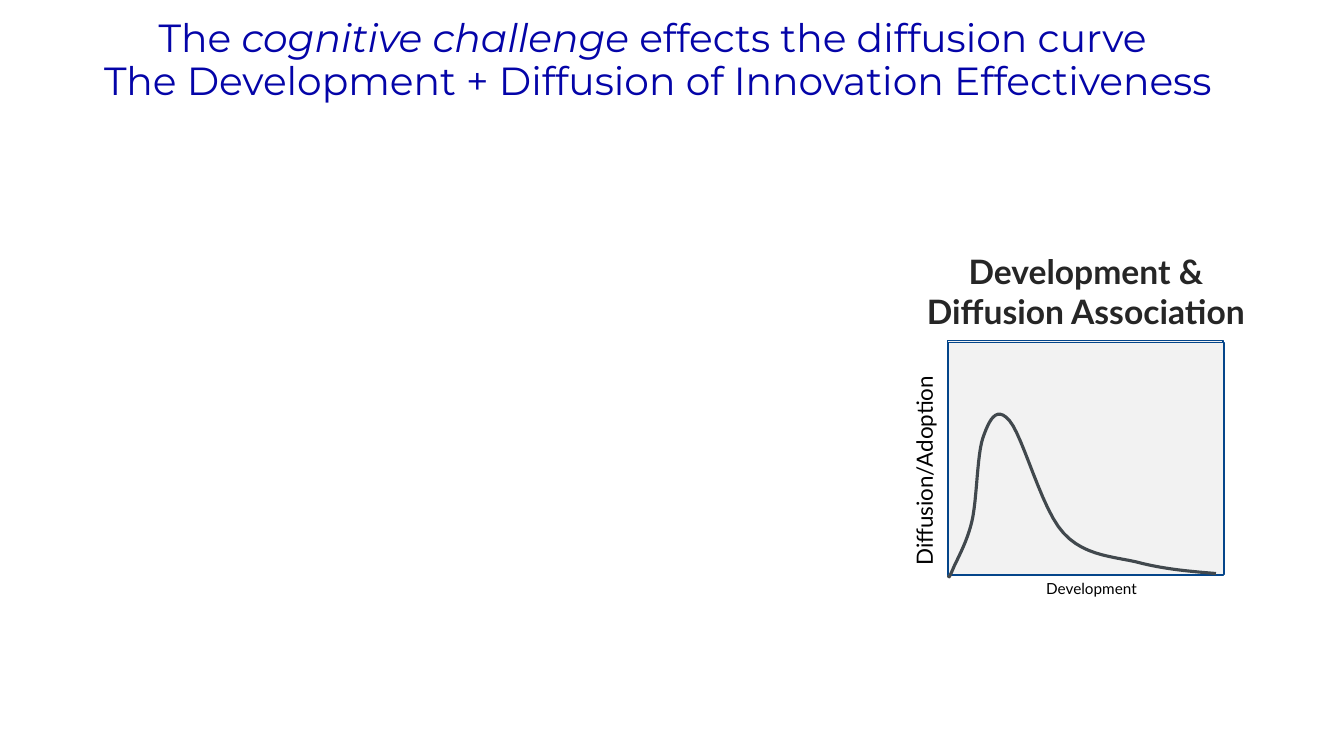
from pptx import Presentation
from pptx.dml.color import RGBColor
from pptx.enum.shapes import MSO_SHAPE
from pptx.enum.text import MSO_ANCHOR, MSO_AUTO_SIZE, PP_ALIGN
from pptx.util import Inches, Pt

NAVY = RGBColor(0x04, 0x04, 0xA8)
BLUE = RGBColor(0x04, 0x45, 0x8A)
SLATE = RGBColor(0x41, 0x48, 0x4D)
PALE = RGBColor(0xF2, 0xF2, 0xF2)
INK = RGBColor(0x26, 0x26, 0x26)
BLACK = RGBColor(0, 0, 0)

CELL = Inches(0.1)
STEPS = 12
PLATE_OFFSETS = [(0, 0.1), (0, -0.2), (0.1, 0)]
CURVE_START = (0.1, 23.1)
CURVE = [
    [(0.1, 23.3), (0.1, 23.4), (0.5, 22.5)],
    [(0.8, 21.7), (1.9, 19.9), (2.4, 17.7)],
    [(2.9, 15.6), (2.9, 11.1), (3.5, 9.4)],
    [(4.1, 7.7), (4.8, 6.2), (6.1, 7.7)],
    [(7.5, 9.3), (9.3, 16.6), (11.5, 18.9)],
    [(13.7, 21.3), (16.8, 21.2), (19.3, 21.9)],
    [(21.8, 22.5), (24.2, 22.7), (26.6, 22.9)],
]


def cells(*values):
    """Turn grid cells into whole slide units."""
    return [round(v * CELL) for v in values]


def set_all(obj, formats):
    """Set every attribute named in a dict of format values."""
    for name, value in formats.items():
        setattr(obj, name, value)


def style_font(font, color, **formats):
    """Apply a colour and format values to a font."""
    set_all(font, formats)
    font.color.rgb = color


def add_title(slide, box):
    """Place the two-line title with its italic phrase."""
    sp = slide.shapes.title
    set_all(sp, dict(zip(("left", "top", "width", "height"), cells(*box))))
    tf = sp.text_frame
    set_all(tf, {"margin_left": 0, "margin_right": 0, "margin_top": 0,
                 "margin_bottom": 0, "vertical_anchor": MSO_ANCHOR.BOTTOM,
                 "word_wrap": True, "auto_size": MSO_AUTO_SIZE.NONE})
    p = tf.paragraphs[0]
    set_all(p, {"alignment": PP_ALIGN.CENTER, "line_spacing": 0.9})
    lines = [
        [("The ", False), ("cognitive challenge ", True),
         ("effects the diffusion curve ", False)],
        [("The Development + Diffusion of Innovation Effectiveness", False)],
    ]
    for i, line in enumerate(lines):
        if i:
            p.add_line_break()
        for text, italic in line:
            r = p.add_run()
            r.text = text
            style_font(r.font, NAVY, name="Montserrat", size=Pt(28), italic=italic)


def add_label(slide, box, lines, size, color=BLACK, bold=False,
              align=PP_ALIGN.CENTER, rotation=0):
    """Add a wrapped text box, one paragraph per line."""
    sp = slide.shapes.add_textbox(*cells(*box))
    sp.rotation = rotation
    tf = sp.text_frame
    set_all(tf, {"word_wrap": True, "auto_size": MSO_AUTO_SIZE.SHAPE_TO_FIT_TEXT})
    for i, line in enumerate(lines):
        p = tf.add_paragraph() if i else tf.paragraphs[0]
        p.alignment = align
        r = p.add_run()
        r.text = line
        style_font(r.font, color, name="Lato", size=Pt(size), bold=bold)


def bezier(start, segments):
    """Return points along a chain of cubic segments."""
    points = [start]
    for a, b, end in segments:
        for n in range(1, STEPS + 1):
            t = n / STEPS
            u = 1 - t
            points.append(tuple(
                u**3 * w + 3 * u * u * t * x + 3 * u * t * t * y + t**3 * z
                for w, x, y, z in zip(start, a, b, end)))
        start = end
    return points


def add_plot(slide, box):
    """Draw the layered plates and the diffusion curve on them."""
    x, y, w, h = box
    for dx, dy in PLATE_OFFSETS:
        sp = slide.shapes.add_shape(MSO_SHAPE.RECTANGLE, *cells(x + dx, y + dy, w, h))
        sp.shadow.inherit = False
        sp.fill.solid()
        sp.fill.fore_color.rgb = PALE
        sp.line.color.rgb = BLUE
        sp.line.width = Pt(1)
    points = [cells(x + px, y + py) for px, py in bezier(CURVE_START, CURVE)]
    builder = slide.shapes.build_freeform(*points[0])
    builder.add_line_segments(points[1:], close=False)
    sp = builder.convert_to_shape()
    sp.shadow.inherit = False
    sp.fill.background()
    sp.line.color.rgb = SLATE
    sp.line.width = Pt(2.25)


def add_association_panel(slide, box):
    """Place the heading, plot and axis labels within the panel."""
    x, y, w, h = box
    add_plot(slide, (x + 5, y + 9.6, 27.3, 23))
    add_label(slide, (x - 9.3, y + 18.9, 23.9, 3.7), ["Diffusion/Adoption"], 16,
              align=PP_ALIGN.LEFT, rotation=270)
    add_label(slide, (x + 7.3, y + h - 2.8, 23.9, 2.8), ["Development"], 10.9)
    add_label(slide, (x, y, w, 9.1), ["Development &", "Diffusion Association"],
              24, INK, bold=True)


def main():
    """Build and save the slide."""
    prs = Presentation()
    set_all(prs, {"slide_width": Inches(13.33), "slide_height": Inches(7.5)})
    slide = prs.slides.add_slide(prs.slide_layouts[5])
    add_title(slide, (4, 6, 122.5, 4.3))
    add_association_panel(slide, (89, 24.4, 37.4, 35.4))
    prs.save("out.pptx")


if __name__ == "__main__":
    main()
